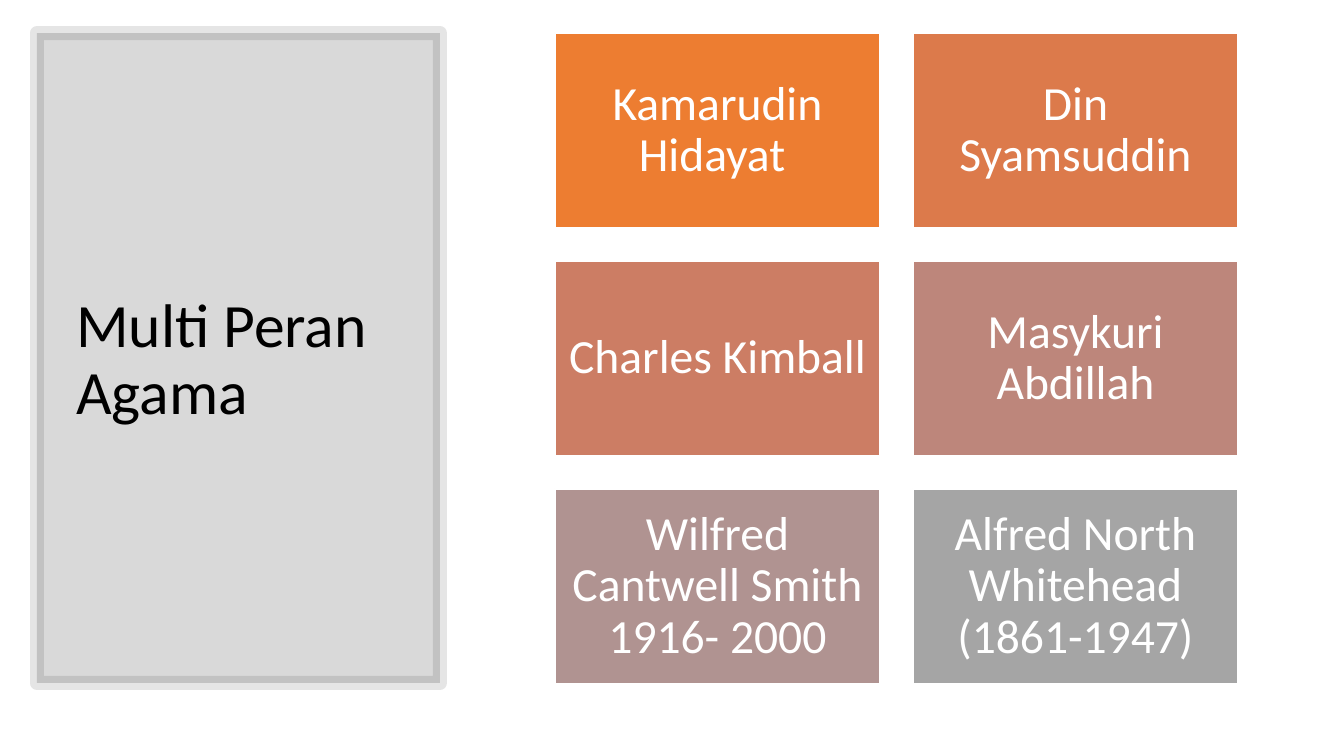
from lxml.etree import SubElement
from pptx import Presentation
from pptx.dml.color import RGBColor as RGB
from pptx.enum.shapes import MSO_SHAPE as Shape
from pptx.enum.text import MSO_ANCHOR as Anchor, MSO_AUTO_SIZE as Fit, PP_ALIGN as Align
from pptx.oxml.ns import qn
from pptx.util import Pt

TITLE = "Multi Peran Agama"
TILES = [
    ("Kamarudin Hidayat ", "orange"),
    ("Din Syamsuddin", "rust"),
    ("Charles Kimball", "coral"),
    ("Masykuri Abdillah", "rose"),
    ("Wilfred Cantwell Smith 1916- 2000", "mauve"),
    ("Alfred North Whitehead (1861-1947)", "gray"),
]
COLORS = {
    "black": "000000", "white": "FFFFFF", "orange": "ED7D31", "rust": "DC7A4B",
    "coral": "CC7D64", "rose": "BD867B", "mauve": "B09391", "gray": "A5A5A5",
}
FONT = "Calibri"
SLIDE = (1344, 756)
PANEL = (37, 33, 403, 650)
HEAD = (66, 71, 349, 580)
LEFT, TOP = 555, 33
WIDE, HIGH = 325, 195
GAP = 33
INSET = 14
COLS = 2
SCALE = 914400 / 100.8


def emu(px):
    return round(px * SCALE)


def paint(fill, name, alpha=None):
    fill.solid()
    fill.fore_color.rgb = RGB.from_string(COLORS[name])
    if alpha:
        color = fill._xPr.find(qn("a:solidFill"))[0]
        SubElement(color, qn("a:alpha"), val=str(alpha * 1000))


def add_box(slide, box, fill, line, width, alphas=(None, None)):
    shape = slide.shapes.add_shape(Shape.RECTANGLE, *map(emu, box))
    shape.shadow.inherit = False
    paint(shape.fill, fill, alphas[0])
    paint(shape.line.fill, line, alphas[1])
    shape.line.width = Pt(width)
    return shape


def write(shape, text, size, color, align):
    frame = shape.text_frame
    frame.word_wrap = True
    frame.auto_size = Fit.NONE
    frame.vertical_anchor = Anchor.MIDDLE
    para = frame.paragraphs[0]
    para.alignment = align
    para.line_spacing = 0.9
    run = para.add_run()
    run.text = text
    run.font.size = Pt(size)
    run.font.name = FONT
    run.font.color.rgb = RGB.from_string(COLORS[color])
    return frame


def main():
    deck = Presentation()
    deck.slide_width, deck.slide_height = map(emu, SLIDE)
    slide = deck.slides.add_slide(deck.slide_layouts[5])

    panel = add_box(slide, PANEL, "black", "black", 10, (15, 10))
    title = slide.shapes.title
    title.left, title.top, title.width, title.height = map(emu, HEAD)
    write(title, TITLE, 44, "black", Align.LEFT)
    panel._element.addnext(title._element)

    for i, (name, color) in enumerate(TILES):
        row, col = divmod(i, COLS)
        box = (LEFT + col * (WIDE + GAP), TOP + row * (HIGH + GAP), WIDE, HIGH)
        tile = add_box(slide, box, color, "white", 1)
        frame = write(tile, name, 34, "white", Align.CENTER)
        frame.margin_left = frame.margin_right = emu(INSET)
        frame.margin_top = frame.margin_bottom = emu(INSET)

    deck.save("out.pptx")


if __name__ == "__main__":
    main()
